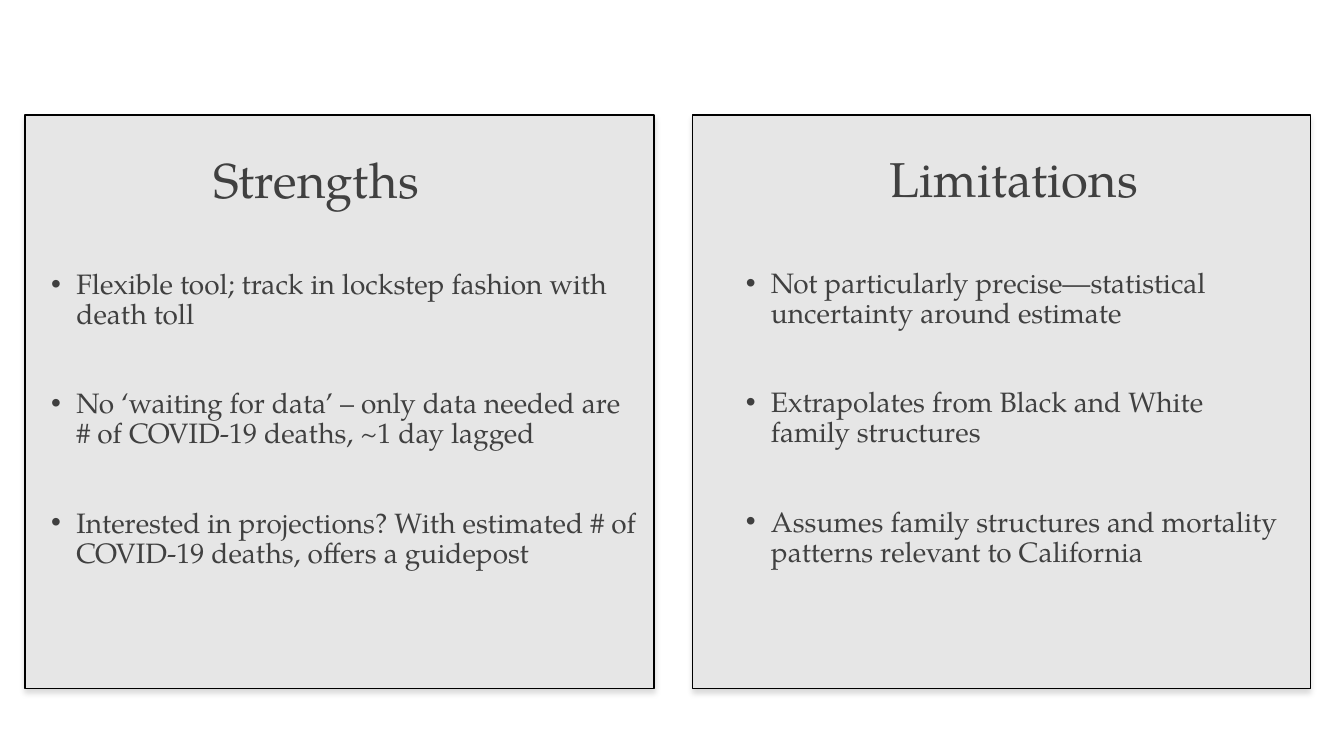
from dataclasses import dataclass

from lxml.etree import SubElement
from pptx import Presentation
from pptx.dml.color import RGBColor
from pptx.enum.shapes import MSO_SHAPE
from pptx.enum.text import MSO_ANCHOR, PP_ALIGN
from pptx.oxml.ns import qn
from pptx.slide import Slide
from pptx.util import Pt

PANEL_GREY = RGBColor(0xE6, 0xE6, 0xE6)
BLACK = RGBColor(0x00, 0x00, 0x00)
TEXT_GREY = RGBColor(0x40, 0x40, 0x40)
FONT_NAME = "TeX Gyre Pagella"
BULLET_INDENT = 18


@dataclass(frozen=True)
class Box:
    left: float
    top: float
    width: float
    height: float

    def lengths(self) -> tuple[Pt, Pt, Pt, Pt]:
        return Pt(self.left), Pt(self.top), Pt(self.width), Pt(self.height)


@dataclass(frozen=True)
class Column:
    panel: Box
    heading_box: Box
    heading: str
    heading_alignment: PP_ALIGN
    list_box: Box
    points: tuple[str, ...]


COLUMNS = (
    Column(
        panel=Box(18, 82, 449.3, 409.7),
        heading_box=Box(118, 100, 216, 60.5),
        heading="Strengths",
        heading_alignment=PP_ALIGN.CENTER,
        list_box=Box(29.5, 157, 434.2, 298.8),
        points=(
            "Flexible tool; track in lockstep fashion with death toll",
            "No ‘waiting for data’ – only data needed are # of COVID-19 deaths, ~1 day lagged",
            "Interested in projections? With estimated # of COVID-19 deaths, offers a guidepost",
        ),
    ),
    Column(
        panel=Box(494.6, 82, 441.4, 409.7),
        heading_box=Box(628.6, 84.2, 199.4, 91.4),
        heading="Limitations",
        heading_alignment=PP_ALIGN.LEFT,
        list_box=Box(525.6, 156.3, 399.6, 298.8),
        points=(
            "Not particularly precise—statistical uncertainty around estimate",
            "Extrapolates from Black and White family structures",
            "Assumes family structures and mortality patterns relevant to California",
        ),
    ),
)


def add_panel(slide: Slide, box: Box) -> None:
    shape = slide.shapes.add_shape(MSO_SHAPE.RECTANGLE, *box.lengths())
    shape.fill.solid()
    shape.fill.fore_color.rgb = PANEL_GREY
    shape.line.color.rgb = BLACK
    shape.line.width = Pt(1)
    shape.shadow.inherit = False
    effects = shape._element.spPr.find(qn("a:effectLst"))
    shadow = SubElement(
        effects, qn("a:outerShdw"), blurRad=str(Pt(4)), dist=str(Pt(3)),
        dir="5400000", algn="t", rotWithShape="0",
    )
    color = SubElement(shadow, qn("a:srgbClr"), val=str(BLACK))
    SubElement(color, qn("a:alpha"), val="15000")


def add_text(
    slide: Slide,
    box: Box,
    lines: tuple[str, ...],
    *,
    size: float,
    alignment: PP_ALIGN = PP_ALIGN.LEFT,
    anchor: MSO_ANCHOR = MSO_ANCHOR.TOP,
    margin_top: float = 3.6,
    gap: float = 0,
    bulleted: bool = False,
) -> None:
    frame = slide.shapes.add_textbox(*box.lengths()).text_frame
    frame.word_wrap = True
    frame.vertical_anchor = anchor
    frame.margin_top = Pt(margin_top)
    for index, line in enumerate(lines):
        paragraph = frame.add_paragraph() if index else frame.paragraphs[0]
        paragraph.alignment = alignment
        paragraph.line_spacing = 0.9
        paragraph.space_before = Pt(gap if index else 0)
        run = paragraph.add_run()
        run.text = line
        run.font.name = FONT_NAME
        run.font.size = Pt(size)
        run.font.color.rgb = TEXT_GREY
        if bulleted:
            properties = paragraph._p.get_or_add_pPr()
            properties.set("marL", str(Pt(BULLET_INDENT)))
            properties.set("indent", str(-Pt(BULLET_INDENT)))
            SubElement(properties, qn("a:buFont"), typeface="Arial")
            SubElement(properties, qn("a:buChar"), char="•")


def add_column(slide: Slide, column: Column) -> None:
    add_panel(slide, column.panel)
    add_text(
        slide, column.heading_box, (column.heading,), size=35,
        alignment=column.heading_alignment, anchor=MSO_ANCHOR.MIDDLE,
    )
    add_text(
        slide, column.list_box, column.points, size=20,
        margin_top=36, gap=42, bulleted=True,
    )


def main() -> None:
    presentation = Presentation()
    presentation.slide_width = Pt(960)
    presentation.slide_height = Pt(540)
    slide = presentation.slides.add_slide(presentation.slide_layouts[6])
    for column in COLUMNS:
        add_column(slide, column)
    presentation.save("out.pptx")


if __name__ == "__main__":
    main()
